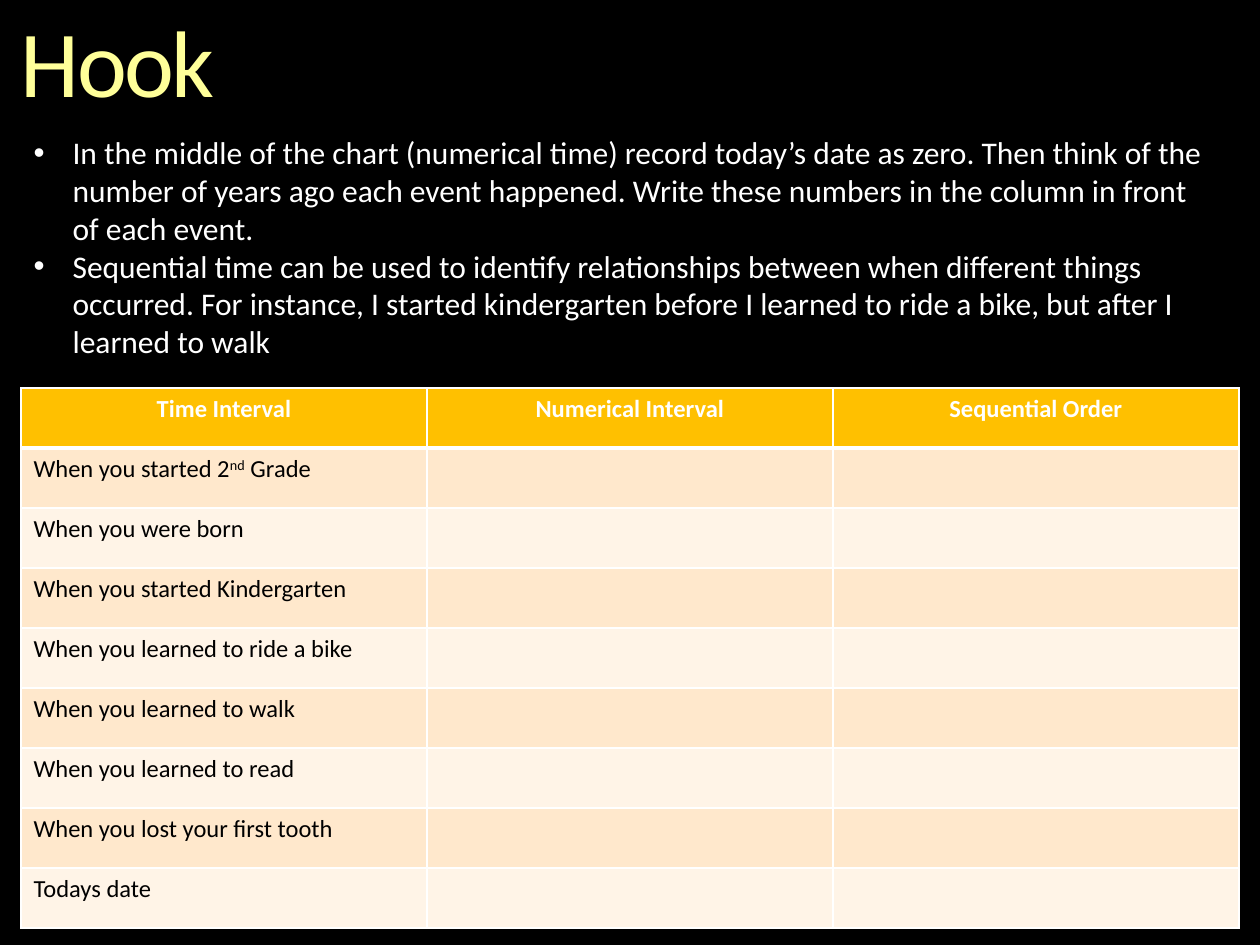
from lxml.etree import SubElement
from pptx import Presentation
from pptx.dml.color import RGBColor
from pptx.enum.text import MSO_ANCHOR, MSO_AUTO_SIZE, PP_ALIGN
from pptx.oxml import parse_xml
from pptx.oxml.ns import nsdecls, qn
from pptx.util import Pt

PX = 914400 / 126
FONT = "Calibri"
WHITE = "FFFFFF"
BANDS = ["FFF4E7", "FFE8CC"]

BULLETS = [
    "In the middle of the chart (numerical time) record today’s date as zero. "
    "Then think of the number of years ago each event happened. "
    "Write these numbers in the column in front of each event.",
    "Sequential time can be used to identify relationships between when different "
    "things occurred. For instance, I started kindergarten before I learned to ride "
    "a bike, but after I learned to walk",
]
HEADERS = ["Time Interval", "Numerical Interval", "Sequential Order"]
# Each event is a list of runs; every second run is raised.
EVENTS = [
    ["When you started 2", "nd", " Grade"],
    ["When you were born"],
    ["When you started Kindergarten"],
    ["When you learned to ride a bike"],
    ["When you learned to walk"],
    ["When you learned to read"],
    ["When you lost your first tooth"],
    ["Todays date"],
]


def px(n):
    return round(n * PX)


def rgb(color):
    return RGBColor.from_string(color)


def place(sp, box):
    sp.left, sp.top, sp.width, sp.height = map(px, box)


def format_run(r, size, color, bold=False):
    r.font.name = FONT
    r.font.size = Pt(size)
    r.font.bold = bold
    r.font.color.rgb = rgb(color)


def add_title(sp, box):
    place(sp, box)
    tf = sp.text_frame
    tf.text = "Hook"
    tf.auto_size = MSO_AUTO_SIZE.NONE
    tf.vertical_anchor = MSO_ANCHOR.MIDDLE
    tf.margin_left = tf.margin_right = tf.margin_top = tf.margin_bottom = 0
    p = tf.paragraphs[0]
    p.alignment = PP_ALIGN.LEFT
    p.line_spacing = 0.9
    r = p.runs[0]
    format_run(r, 54, "FFFF99")
    r.font._element.set("spc", "-150")


def add_instructions(sp, box, indent=39):
    place(sp, box)
    tf = sp.text_frame
    tf.text = "\n".join(BULLETS)
    tf.word_wrap = True
    tf.auto_size = MSO_AUTO_SIZE.SHAPE_TO_FIT_TEXT
    for p in tf.paragraphs:
        pPr = p._p.get_or_add_pPr()
        pPr.set("marL", str(px(indent)))
        pPr.set("indent", str(-px(indent)))
        SubElement(pPr, qn("a:buFont")).set("typeface", "Arial")
        SubElement(pPr, qn("a:buChar")).set("char", "•")
        p.space_before = Pt(0)
        format_run(p.runs[0], 18, WHITE)


def style_cell(cell, fill, top=1, bottom=1):
    """Fill a cell and give it white borders, with top and bottom widths in points."""
    cell.fill.solid()
    cell.fill.fore_color.rgb = rgb(fill)
    tcPr = cell._tc.get_or_add_tcPr()
    for i, (side, width) in enumerate([("L", 1), ("R", 1), ("T", top), ("B", bottom)]):
        tcPr.insert(i, parse_xml(
            f'<a:ln{side} {nsdecls("a")} w="{Pt(width)}"><a:solidFill>'
            f'<a:srgbClr val="{WHITE}"/></a:solidFill></a:ln{side}>'))


def add_time_table(slide, box):
    rows, cols = len(EVENTS) + 1, len(HEADERS)
    table = slide.shapes.add_table(rows, cols, *map(px, box)).table
    for col in table.columns:
        col.width = px(box[2] / cols)
    for row in table.rows:
        row.height = px(box[3] / rows)

    for c, text in enumerate(HEADERS):
        cell = table.cell(0, c)
        style_cell(cell, "FFC000", bottom=3)
        cell.text = text
        p = cell.text_frame.paragraphs[0]
        p.alignment = PP_ALIGN.CENTER
        format_run(p.runs[0], 14, WHITE, bold=True)

    for n, event in enumerate(EVENTS, 1):
        for c in range(cols):
            style_cell(table.cell(n, c), BANDS[n % 2], top=3 if n == 1 else 1)
        p = table.cell(n, 0).text_frame.paragraphs[0]
        for i, text in enumerate(event):
            r = p.add_run()
            r.text = text
            format_run(r, 14, "000000")
            if i % 2:
                r.font._element.set("baseline", "30000")


def main():
    prs = Presentation()
    prs.slide_width, prs.slide_height = px(1260), px(945)
    slide = prs.slides.add_slide(prs.slide_layouts[1])
    slide.background.fill.solid()
    slide.background.fill.fore_color.rgb = rgb("000000")
    title, body = slide.placeholders
    add_title(title, (21, 1, 305, 131))
    add_time_table(slide, (21, 388, 1218, 540))
    add_instructions(body, (21, 127, 1207, 242))
    prs.save("out.pptx")


if __name__ == "__main__":
    main()
